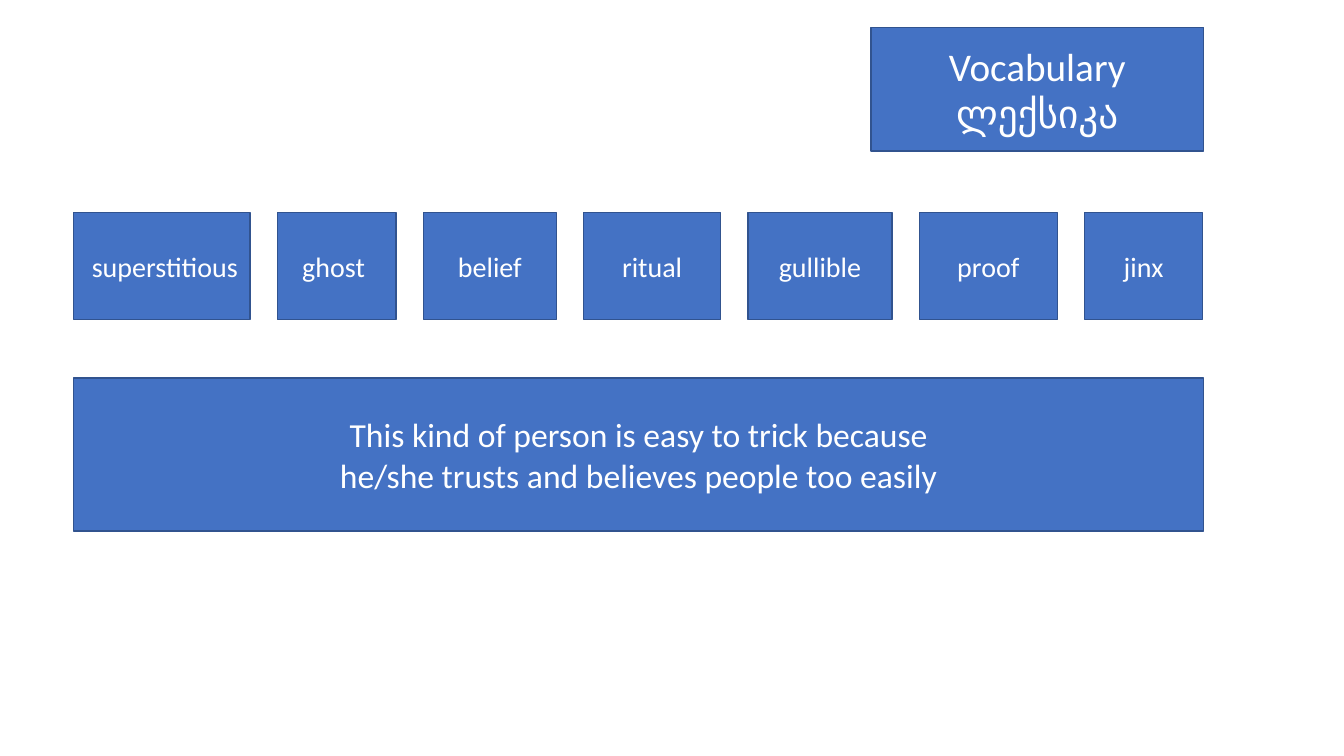
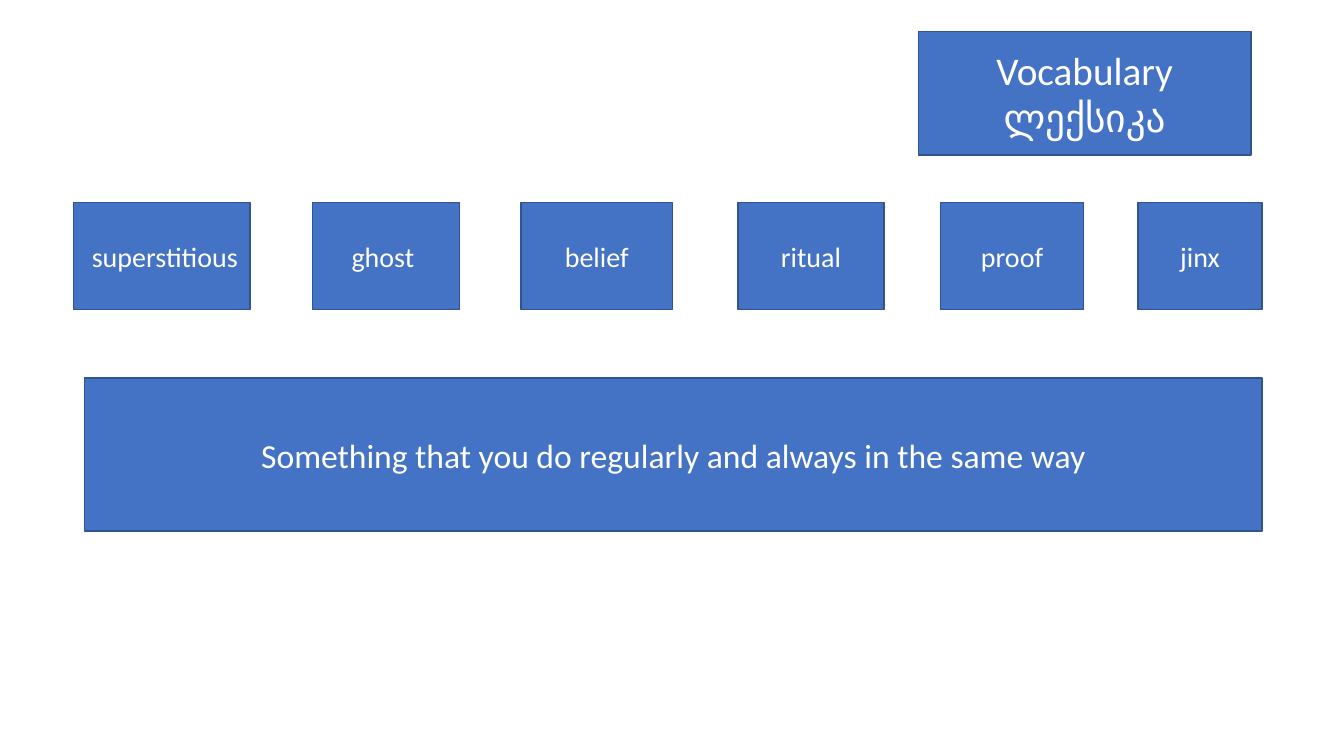
from pptx import Presentation
from pptx.dml.color import RGBColor
from pptx.enum.shapes import MSO_SHAPE as Shape
from pptx.enum.text import MSO_ANCHOR as Anchor, MSO_AUTO_SIZE as Auto, PP_ALIGN as Align
from pptx.util import Inches, Pt

FILL, EDGE, INK = "4472C4", "31538F", "FFFFFF"
FONT = "Calibri"
CELL = Inches(0.1)
COLS, ROWS = 133.33, 75
NUDGE = {"superstitious": 0.6, "ghost": -0.6}


def tint(hue):
    """Turn a hex string into a colour."""
    return RGBColor.from_string(hue)


def grid(*cells):
    """Turn grid cells into lengths."""
    return [round(cell * CELL) for cell in cells]


def dress(shape, text, size, nudge=0):
    """Give a box its fill, edge and centred text."""
    shape.fill.solid()
    shape.fill.fore_color.rgb = tint(FILL)
    shape.line.color.rgb = tint(EDGE)
    shape.line.width = Pt(1)
    frame = shape.text_frame
    frame.text = text
    frame.word_wrap = True
    frame.auto_size = Auto.NONE
    frame.vertical_anchor = Anchor.MIDDLE
    frame.margin_left, frame.margin_right = grid(1 + max(nudge, 0), 1 + max(-nudge, 0))
    for para in frame.paragraphs:
        para.alignment = Align.CENTER
        para.line_spacing = 1.0
        para.font.name = FONT
        para.font.size = Pt(size)
        para.font.color.rgb = tint(INK)


def panel(slide, box, text, size, nudge=0):
    """Add one filled box with text."""
    shape = slide.shapes.add_shape(Shape.RECTANGLE, *grid(*box))
    shape.shadow.inherit = False
    dress(shape, text, size, nudge)


def head(slide, box):
    """Move and format the title."""
    title = slide.shapes.title
    title.left, title.top, title.width, title.height = grid(*box)
    dress(title, "Vocabulary\nლექსიკა", 28)


def bank(slide, left, top, words, gaps):
    """Lay the word cards out in a row from the left."""
    for (word, wide), gap in zip(words, gaps + [0]):
        panel(slide, (left, top, wide, 10.6), word, 20, NUDGE.get(word, 0))
        left += wide + gap


def quiz(deck, title, row, words, gaps, clue, text):
    """Build a slide with a title, word cards and a clue."""
    slide = deck.slides.add_slide(deck.slide_layouts.get_by_name("Title Only"))
    head(slide, (*title, 33, 12.3))
    bank(slide, *row, words, gaps)
    left, wide = clue
    panel(slide, (left, ROWS / 2, wide, 15.2), text, 24)


def main():
    """Build and save the deck."""
    deck = Presentation()
    deck.slide_width, deck.slide_height = grid(COLS, ROWS)
    quiz(
        deck, (86.4, 2.7), (7.3, 21.1),
        [("superstitious", 17.5), ("ghost", 11.8), ("belief", 13.2), ("ritual", 13.6),
         ("gullible", 14.3), ("proof", 13.7), ("jinx", 11.7)],
        [2.7] * 6, (7.3, 112.1),
        "This kind of person is easy to trick because\v"
        "he/she trusts and believes people too easily",
    )
    quiz(
        deck, (91.1, 3.1), (7.3, 20.1),
        [("superstitious", 17.5), ("ghost", 14.6), ("belief", 15), ("ritual", 14.5),
         ("proof", 14.2), ("jinx", 12.3)],
        [6.2, 6.1, 6.5, 5.6, 5.4], (8.4, 116.8),
        "Something that you do regularly and always in the same way",
    )
    deck.save("out.pptx")


if __name__ == "__main__":
    main()
